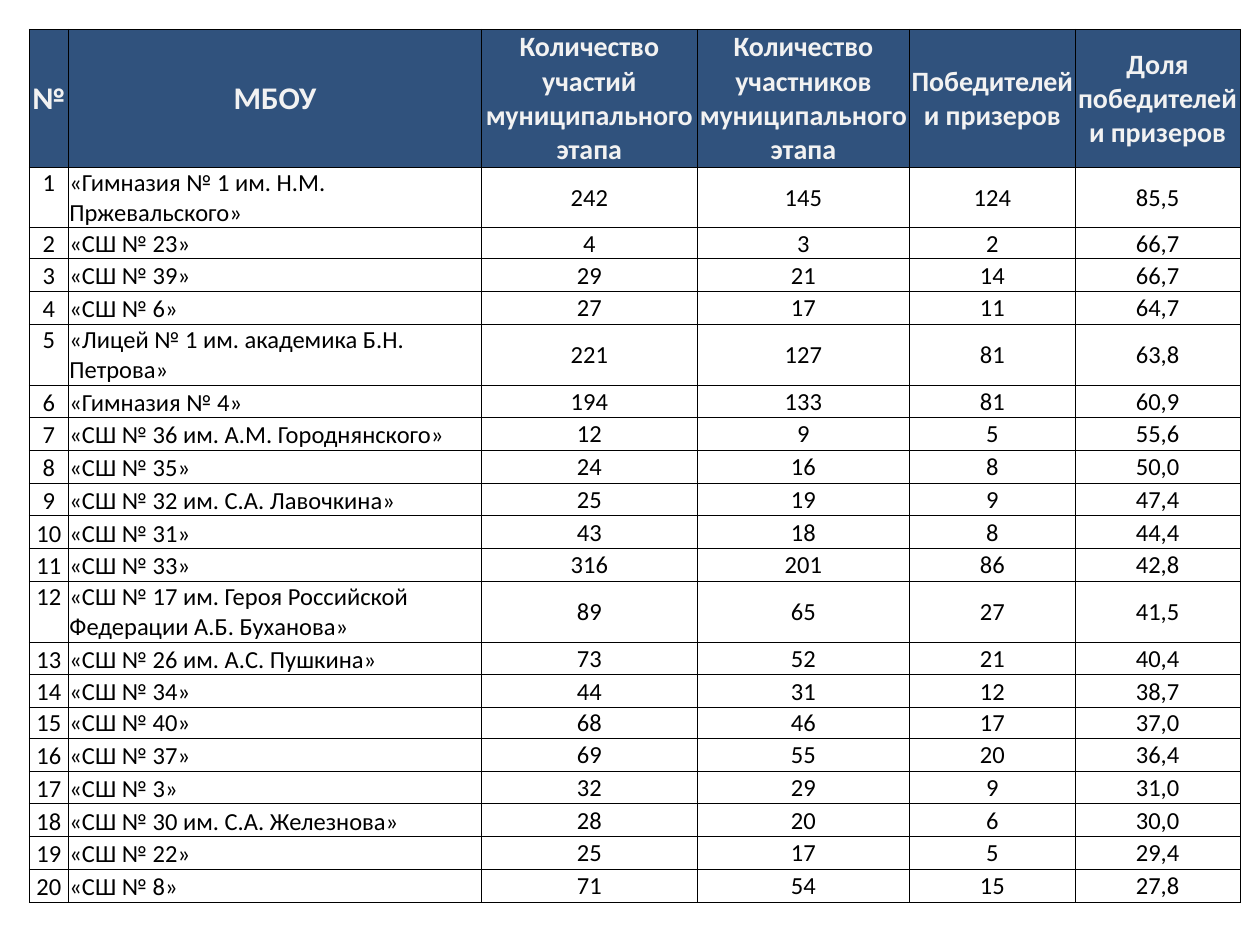
from lxml.etree import SubElement as Sub
from pptx import Presentation
from pptx.dml.color import RGBColor
from pptx.enum.text import MSO_ANCHOR as Anchor, PP_ALIGN as Align
from pptx.oxml.ns import qn
from pptx.util import Cm, Pt

HEAD = ["№", "МБОУ", "Количество участий муниципального этапа",
        "Количество участников муниципального этапа",
        "Победителей и призеров", "Доля победителей и призеров"]
SCHOOLS = [
    ("«Гимназия № 1 им. Н.М. Пржевальского»", 242, 145, 124, "85,5"),
    ("«СШ № 23»", 4, 3, 2, "66,7"),
    ("«СШ № 39»", 29, 21, 14, "66,7"),
    ("«СШ № 6»", 27, 17, 11, "64,7"),
    ("«Лицей № 1 им. академика Б.Н. Петрова»", 221, 127, 81, "63,8"),
    ("«Гимназия № 4»", 194, 133, 81, "60,9"),
    ("«СШ № 36 им. А.М. Городнянского»", 12, 9, 5, "55,6"),
    ("«СШ № 35»", 24, 16, 8, "50,0"),
    ("«СШ № 32 им. С.А. Лавочкина»", 25, 19, 9, "47,4"),
    ("«СШ № 31»", 43, 18, 8, "44,4"),
    ("«СШ № 33»", 316, 201, 86, "42,8"),
    ("«СШ № 17 им. Героя Российской Федерации А.Б. Буханова»", 89, 65, 27, "41,5"),
    ("«СШ № 26 им. А.С. Пушкина»", 73, 52, 21, "40,4"),
    ("«СШ № 34»", 44, 31, 12, "38,7"),
    ("«СШ № 40»", 68, 46, 17, "37,0"),
    ("«СШ № 37»", 69, 55, 20, "36,4"),
    ("«СШ № 3»", 32, 29, 9, "31,0"),
    ("«СШ № 30 им. С.А. Железнова»", 28, 20, 6, "30,0"),
    ("«СШ № 22»", 25, 17, 5, "29,4"),
    ("«СШ № 8»", 71, 54, 15, "27,8"),
]
WIDTHS = [0.79, 8.33, 4.34, 4.29, 3.33, 3.33]
HEIGHTS = {0: 2.62, 2: 0.58, 15: 0.61}  # all other rows are 0.66
TALL = (1, 5, 12)  # rows whose school name takes two lines


def rgb(code):
    return RGBColor.from_string(code)


def border(cell, color="000000", width=0.5):
    props = cell._tc.get_or_add_tcPr()
    for side in ("a:lnL", "a:lnR", "a:lnT", "a:lnB"):
        line = Sub(props, qn(side), w=str(Pt(width)))
        fill = Sub(line, qn("a:solidFill"))
        Sub(fill, qn("a:srgbClr"), val=color)


def write(cell, text, size, color, bold, align, anchor):
    cell.margin_left = cell.margin_right = cell.margin_top = Cm(0.02)
    cell.margin_bottom = 0
    cell.vertical_anchor = anchor
    cell.text_frame.text = text
    par = cell.text_frame.paragraphs[0]
    par.alignment = align
    font = par.runs[0].font
    font.name, font.size, font.bold = "Calibri", Pt(size), bold
    font.color.rgb = rgb(color)
    border(cell)


def head_row(table):
    for col, text in enumerate(HEAD):
        cell = table.cell(0, col)
        write(cell, text, 18 if col < 2 else 16, "F2F2F2", True,
              Align.CENTER, Anchor.MIDDLE)
        cell.fill.solid()
        cell.fill.fore_color.rgb = rgb("30527D")


def school_row(table, row, school):
    for col, value in enumerate((row, *school)):
        anchor = Anchor.BOTTOM if col < 2 else Anchor.MIDDLE
        if col == 0 and row in TALL:
            anchor = Anchor.TOP
        cell = table.cell(row, col)
        write(cell, str(value), 14, "000000", False,
              Align.LEFT if col == 1 else Align.CENTER, anchor)
        cell.fill.background()


def ranking(slide, left, top, width, height):
    frame = slide.shapes.add_table(len(SCHOOLS) + 1, len(HEAD),
                                   left, top, width, height)
    table = frame.table
    table.first_row = table.horz_banding = False
    # Grid
    for col, size in zip(table.columns, WIDTHS):
        col.width = Cm(size)
    for num, row in enumerate(table.rows):
        row.height = Cm(HEIGHTS.get(num, 0.66))
    frame.height = height
    # Text
    head_row(table)
    for num, school in enumerate(SCHOOLS, 1):
        school_row(table, num, school)


def main():
    deck = Presentation()
    deck.slide_width, deck.slide_height = Cm(25.4), Cm(19.05)
    slide = deck.slides.add_slide(deck.slide_layouts[6])
    ranking(slide, Cm(0.59), Cm(0.59), Cm(24.41), Cm(17.42))
    deck.save("out.pptx")


if __name__ == "__main__":
    main()
